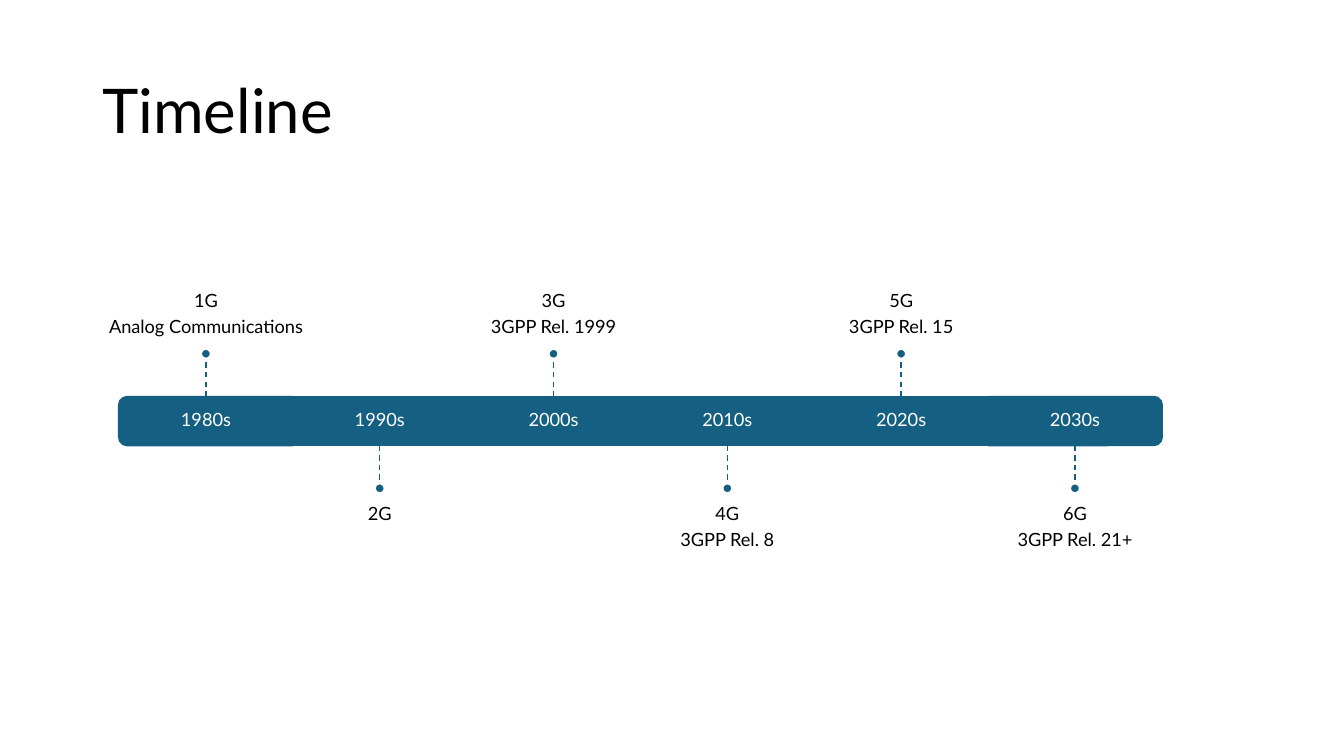
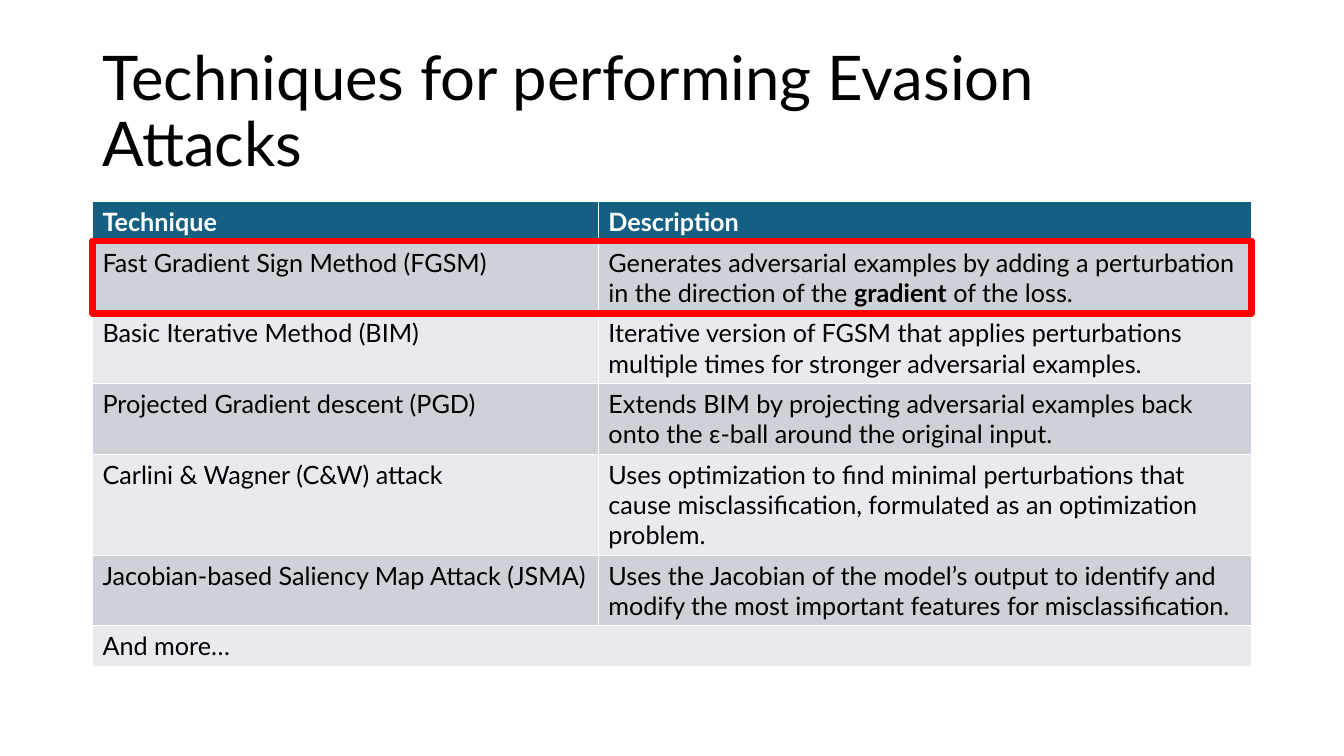
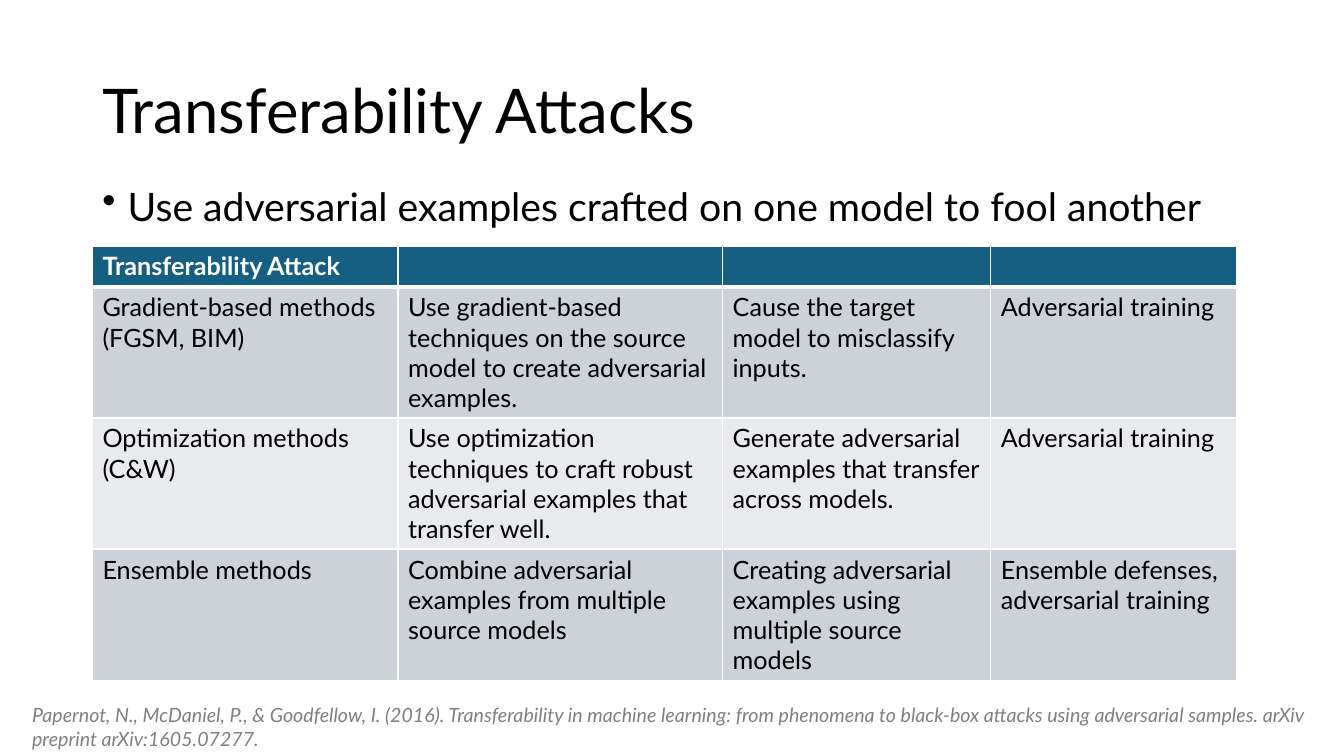
"""Build three slides on mobile generations and adversarial attacks."""
from lxml import etree
from pptx import Presentation
from pptx.dml.color import RGBColor
from pptx.enum.dml import MSO_LINE
from pptx.enum.shapes import MSO_CONNECTOR, MSO_SHAPE
from pptx.enum.text import MSO_ANCHOR, PP_ALIGN
from pptx.oxml.ns import qn
from pptx.util import Cm, Pt

BLUE = RGBColor(0x15, 0x60, 0x82)
BAND_DARK = RGBColor(0xCC, 0xD2, 0xD8)
BAND_LIGHT = RGBColor(0xE8, 0xEA, 0xED)
BLACK = RGBColor(0, 0, 0)
WHITE = RGBColor(0xFF, 0xFF, 0xFF)
GREY = RGBColor(0x80, 0x80, 0x80)
RED = RGBColor(0xFF, 0, 0)
FONT = "Lato"

RECT, OVAL, ROUND_END = MSO_SHAPE.RECTANGLE, MSO_SHAPE.OVAL, MSO_SHAPE.ROUND_2_SAME_RECTANGLE
STRAIGHT, DASH = MSO_CONNECTOR.STRAIGHT, MSO_LINE.DASH
TOP, MIDDLE, BOTTOM = MSO_ANCHOR.TOP, MSO_ANCHOR.MIDDLE, MSO_ANCHOR.BOTTOM
CENTER = PP_ALIGN.CENTER

LEFT, WIDTH = 2.33, 29.21
ROW_H = 1.03
BAR_X, BAR_Y, BAR_H, STEP = 3, 10, 1.22, 4.38
STEM, DOT = 0.96, 0.25
LABEL_W, LABEL_H, PAD = 7.3, 4.24, 0.28

ERAS = [
    ("1980s", ["1G", "Analog Communications"]),
    ("1990s", ["2G"]),
    ("2000s", ["3G", "3GPP Rel. 1999"]),
    ("2010s", ["4G", "3GPP Rel. 8"]),
    ("2020s", ["5G", "3GPP Rel. 15"]),
    ("2030s", ["6G", "3GPP Rel. 21+"]),
]
TECHNIQUES = [
    ["Technique", "Description"],
    ["Fast Gradient Sign Method (FGSM)",
     "Generates adversarial examples by adding a perturbation in the direction of the "
     "**gradient** of the loss."],
    ["Basic Iterative Method (BIM)",
     "Iterative version of FGSM that applies perturbations multiple times for stronger "
     "adversarial examples."],
    ["Projected Gradient descent (PGD)",
     "Extends BIM by projecting adversarial examples back onto the ε-ball around the "
     "original input."],
    ["Carlini & Wagner (C&W) attack",
     "Uses optimization to find minimal perturbations that cause misclassification, "
     "formulated as an optimization problem."],
    ["Jacobian-based Saliency Map Attack (JSMA)",
     "Uses the Jacobian of the model’s output to identify and modify the most important "
     "features for misclassification."],
    ["And more…", ""],
]
TRANSFER = [
    ["Transferability Attack", "", "", ""],
    ["Gradient-based methods (FGSM, BIM)",
     "Use gradient-based techniques on the source model to create adversarial examples.",
     "Cause the target model to misclassify inputs.", "Adversarial training"],
    ["Optimization methods (C&W)",
     "Use optimization techniques to craft robust adversarial examples that transfer well.",
     "Generate adversarial examples that transfer across models.", "Adversarial training"],
    ["Ensemble methods", "Combine adversarial examples from multiple source models",
     "Creating adversarial examples using multiple source models",
     "Ensemble defenses, adversarial training"],
]
CITATION = (
    "Papernot, N., McDaniel, P., & Goodfellow, I. (2016). Transferability in machine "
    "learning: from phenomena to black-box attacks using adversarial samples. arXiv "
    "preprint arXiv:1605.07277.")


def write(tf, lines, size, color=BLACK, bold=False, italic=False, align=None,
          spacing=None, after=None):
    """Fill a text frame with one paragraph a line; **marks** set bold runs."""
    for i, line in enumerate(lines):
        p = tf.add_paragraph() if i else tf.paragraphs[0]
        p.font.name, p.font.size = FONT, Pt(size)
        p.font.bold, p.font.italic = bold, italic
        p.font.color.rgb = color
        if align is not None:
            p.alignment = align
        if spacing is not None:
            p.line_spacing = spacing
        if after is not None:
            p.space_after = Pt(after)
        for j, part in enumerate(line.split("**")):
            if part:
                r = p.add_run()
                r.text = part
                if j % 2:
                    r.font.bold = True


def add_text(s, x, y, w, h, lines, size, anchor=TOP, margins=None, **style):
    """Add a wrapping text box and return its frame."""
    tf = s.shapes.add_textbox(Cm(x), Cm(y), Cm(w), Cm(h)).text_frame
    tf.word_wrap = True
    tf.vertical_anchor = anchor
    if margins:
        tf.margin_left, tf.margin_top, tf.margin_right, tf.margin_bottom = map(Cm, margins)
    write(tf, lines, size, **style)
    return tf


def add_shape(s, kind, x, y, w, h, line, weight, fill=None):
    """Add a flat preset shape."""
    sp = s.shapes.add_shape(kind, Cm(x), Cm(y), Cm(w), Cm(h))
    sp.shadow.inherit = False
    if fill is None:
        sp.fill.background()
    else:
        sp.fill.solid()
        sp.fill.fore_color.rgb = fill
    sp.line.color.rgb = line
    sp.line.width = Pt(weight)
    return sp


def add_stem(s, x, y1, y2):
    """Add a dashed vertical line."""
    cn = s.shapes.add_connector(STRAIGHT, Cm(x), Cm(y1), Cm(x), Cm(y2))
    cn.line.color.rgb = BLUE
    cn.line.width = Pt(1)
    cn.line.dash_style = DASH
    etree.SubElement(cn._element.spPr, qn("a:effectLst"))
    return cn


def add_bullet(p, indent):
    """Give a paragraph a hanging bullet."""
    pPr = p._p.get_or_add_pPr()
    pPr.set("marL", str(Cm(indent)))
    pPr.set("indent", str(-Cm(indent)))
    bullet = etree.Element(qn("a:buChar"), char="•")
    pPr.find(qn("a:defRPr")).addprevious(bullet)


def set_borders(cell, bottom):
    """Draw white cell borders with the given bottom weight."""
    tcPr = cell._tc.get_or_add_tcPr()
    for side, weight in (("L", 1), ("R", 1), ("T", 1), ("B", bottom)):
        ln = etree.SubElement(tcPr, qn(f"a:ln{side}"), w=str(Pt(weight)))
        fill = etree.SubElement(ln, qn("a:solidFill"))
        etree.SubElement(fill, qn("a:srgbClr"), val=str(WHITE))


def add_table(s, y, widths, rows):
    """Add a banded table with a blue header row."""
    table = s.shapes.add_table(len(rows), len(widths), Cm(LEFT), Cm(y),
                               Cm(sum(widths)), Cm(ROW_H * len(rows))).table
    for column, width in zip(table.columns, widths):
        column.width = Cm(width)
    for i, row in enumerate(rows):
        header = i == 0
        fill = BLUE if header else BAND_DARK if i % 2 else BAND_LIGHT
        for j, text in enumerate(row):
            cell = table.cell(i, j)
            set_borders(cell, 3 if header else 1)
            cell.fill.solid()
            cell.fill.fore_color.rgb = fill
            write(cell.text_frame, [text], 18, WHITE if header else BLACK, bold=header)
    return table


def add_slide(prs, title):
    """Add a blank slide with the shared title."""
    s = prs.slides.add_slide(prs.slide_layouts[6])
    add_text(s, LEFT, 1.02, WIDTH, 3.68, [title], 44, MIDDLE, spacing=0.9)
    return s


def add_era(s, i, year, label):
    """Add one block of the timeline with its stem, dot and label."""
    style = {"align": CENTER, "spacing": 0.9, "after": 5}
    x = BAR_X + STEP * i
    cx = x + STEP / 2
    above = i % 2 == 0
    is_end = i in (0, len(ERAS) - 1)
    if is_end:
        block = add_shape(s, ROUND_END, cx - BAR_H / 2, BAR_Y + (BAR_H - STEP) / 2,
                          BAR_H, STEP, BLUE, 1.5, BLUE)
        block.rotation = 90 if i else 270
        add_text(s, x, BAR_Y, STEP, BAR_H, [year], 13, MIDDLE, [PAD] * 4, color=WHITE, **style)
    else:
        block = add_shape(s, RECT, x, BAR_Y, STEP, BAR_H, BLUE, 1.5, BLUE)
        block.text_frame.vertical_anchor = MIDDLE
        write(block.text_frame, [year], 13, WHITE, **style)

    if above:
        edge, tip = BAR_Y, BAR_Y - STEM
        dot_y, label_y = tip - DOT, tip - DOT - LABEL_H
        anchor, margins = BOTTOM, (0, 0, 0, PAD)
    else:
        edge, tip = BAR_Y + BAR_H, BAR_Y + BAR_H + STEM
        dot_y, label_y = tip, tip + DOT
        anchor, margins = TOP, (0, PAD, 0, 0)
    add_text(s, cx - LABEL_W / 2, label_y, LABEL_W, LABEL_H, label, 13, anchor, margins, **style)
    stem = add_stem(s, cx, edge, tip)
    if not is_end:
        stem.begin_connect(block, 0 if above else 2)
    add_shape(s, OVAL, cx - DOT / 2, dot_y, DOT, DOT, WHITE, 1.5, BLUE)


def timeline_slide(prs):
    """Show the mobile generations by decade."""
    s = add_slide(prs, "Timeline")
    for i, (year, label) in enumerate(ERAS):
        add_era(s, i, year, label)


def techniques_slide(prs):
    """List evasion techniques, with the first one framed."""
    s = add_slide(prs, "Techniques for performing Evasion Attacks")
    table = add_table(s, 5.08, [12.75, 16.46], TECHNIQUES)
    last = len(TECHNIQUES) - 1
    table.cell(last, 0).merge(table.cell(last, 1))
    add_shape(s, RECT, LEFT, 6.07, WIDTH, 1.83, RED, 4.5)


def transfer_slide(prs):
    """Compare the transferability attacks."""
    s = add_slide(prs, "Transferability Attacks")
    add_table(s, 6.2, [7.7, 8.18, 6.76, 6.2], TRANSFER)
    tf = add_text(s, LEFT, 4.7, WIDTH, 1.3,
                  ["Use adversarial examples crafted on one model to fool another"],
                  28, spacing=0.8)
    p = tf.paragraphs[0]
    p.space_before = Pt(10)
    add_bullet(p, 0.64)
    add_text(s, 0.56, 17.6, 32.89, 1.45, [CITATION], 14, color=GREY, italic=True)


def main():
    """Build and save the deck."""
    prs = Presentation()
    prs.slide_width, prs.slide_height = Cm(33.87), Cm(19.05)
    timeline_slide(prs)
    techniques_slide(prs)
    transfer_slide(prs)
    prs.save("out.pptx")


if __name__ == "__main__":
    main()
